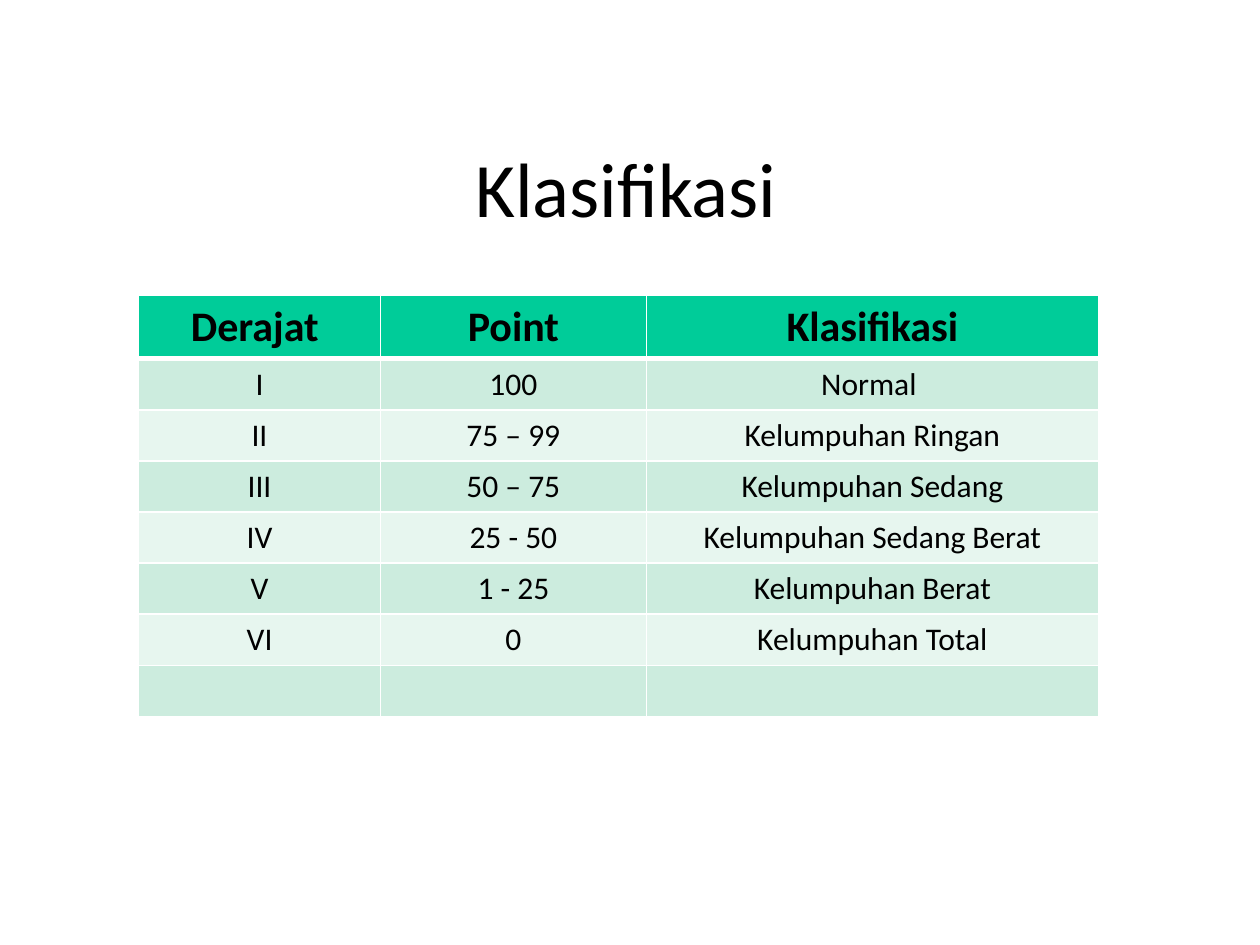
from lxml import etree
from pptx import Presentation
from pptx import util as u
from pptx.dml.color import RGBColor
from pptx.enum import text
from pptx.oxml import ns

FONT = "Calibri"
BLACK, WHITE = "000000", "FFFFFF"
HEADER_FILL = "00CC99"
BAND_FILLS = ("CCECDE", "E7F6EF")
COLUMN_WIDTHS = (1.92, 2.11, 3.59)
HEADER_HEIGHT, TABLE_HEIGHT = 0.5, 3.34
ROWS = (
    ("Derajat ", "Point", "Klasifikasi"),
    ("I", "100", "Normal "),
    ("II", "75 – 99", "Kelumpuhan Ringan"),
    ("III", "50 – 75", "Kelumpuhan Sedang"),
    ("IV", "25 - 50", "Kelumpuhan Sedang Berat"),
    ("V", "1 - 25", "Kelumpuhan Berat"),
    ("VI", "0", "Kelumpuhan Total"),
    ("", "", ""),
)


def color(hex_string):
    return RGBColor.from_string(hex_string)


def format_paragraph(paragraph, size, bold=False):
    paragraph.alignment = text.PP_ALIGN.CENTER
    font = paragraph.font
    font.name, font.size, font.bold = FONT, u.Pt(size), bold
    font.color.rgb = color(BLACK)


def add_title(slide, wording):
    title = slide.shapes.title
    title.left, title.top = u.Inches(0.47), u.Inches(0.86)
    title.width, title.height = u.Inches(9), u.Inches(1.25)
    title.text_frame.text = wording
    title.text_frame.vertical_anchor = text.MSO_ANCHOR.MIDDLE
    format_paragraph(title.text_frame.paragraphs[0], 44)


def set_borders(cell, **points):
    """Draw white cell borders; points maps the sides L, R, T, B to widths."""
    properties = cell._tc.get_or_add_tcPr()
    for side, width in points.items():
        line = etree.SubElement(properties, ns.qn(f"a:ln{side}"), w=str(u.Pt(width)))
        fill = etree.SubElement(line, ns.qn("a:solidFill"))
        etree.SubElement(fill, ns.qn("a:srgbClr"), val=WHITE)


def fill_cell(cell, wording, row_index):
    is_header = row_index == 0
    cell.text = wording
    format_paragraph(cell.text_frame.paragraphs[0], 24 if is_header else 18, is_header)
    set_borders(cell, L=1, R=1, T=3 if row_index == 1 else 1, B=3 if is_header else 1)
    cell.fill.solid()
    band = BAND_FILLS[(row_index - 1) % 2]
    cell.fill.fore_color.rgb = color(HEADER_FILL if is_header else band)


def add_classification_table(slide):
    frame = slide.shapes.add_table(
        len(ROWS), len(COLUMN_WIDTHS), u.Inches(1.1), u.Inches(2.34),
        u.Inches(sum(COLUMN_WIDTHS)), u.Inches(TABLE_HEIGHT))
    table = frame.table
    for column, width in zip(table.columns, COLUMN_WIDTHS):
        column.width = u.Inches(width)
    body_height = (TABLE_HEIGHT - HEADER_HEIGHT) / (len(ROWS) - 1)
    for row_index, (row, wordings) in enumerate(zip(table.rows, ROWS)):
        row.height = u.Inches(body_height if row_index else HEADER_HEIGHT)
        for cell, wording in zip(row.cells, wordings):
            fill_cell(cell, wording, row_index)


def main():
    presentation = Presentation()
    presentation.slide_width, presentation.slide_height = u.Inches(10), u.Inches(7.5)
    title_only = presentation.slide_layouts[5]
    slide = presentation.slides.add_slide(title_only)
    add_title(slide, "Klasifikasi")
    add_classification_table(slide)
    presentation.save("out.pptx")


if __name__ == "__main__":
    main()
